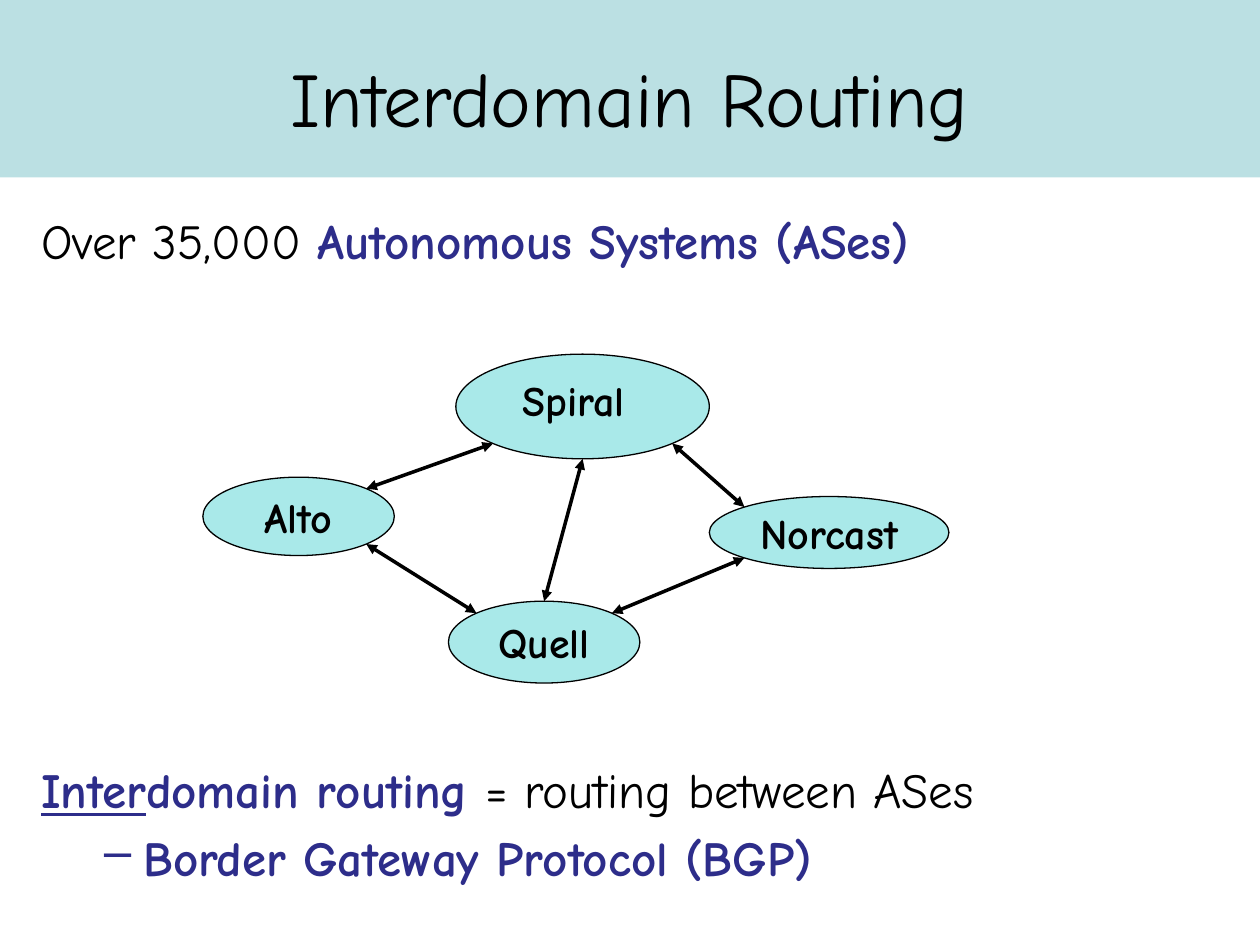
from math import sqrt

from lxml.etree import SubElement
from pptx import Presentation
from pptx.dml.color import RGBColor
from pptx.enum.shapes import MSO_CONNECTOR, MSO_SHAPE
from pptx.enum.text import MSO_ANCHOR, PP_ALIGN
from pptx.oxml.ns import qn
from pptx.util import Cm, Pt

BLACK = RGBColor(0x00, 0x00, 0x00)
NAVY = RGBColor(0x2D, 0x2D, 0x8A)
BAND = RGBColor(0xBB, 0xE0, 0xE3)
TEAL = RGBColor(0x33, 0xCC, 0xCC)
FONT = "Comic Neue"

# name: left, top, width, height within the network, in cm
NODES = {
    "Alto": (0, 2.48, 3.86, 1.58),
    "Quell": (4.95, 4.98, 3.86, 1.65),
    "Spiral": (5.1, 0, 5.11, 2.11),
    "Norcast": (10.21, 2.87, 4.83, 1.45),
}
# name and direction (x, y) of each end
LINKS = [
    ("Quell", (1, -1), "Norcast", (-1, 1)),
    ("Alto", (1, -1), "Spiral", (-1, 1)),
    ("Alto", (1, 1), "Quell", (-1, -1)),
    ("Quell", (0, -1), "Spiral", (0, 1)),
    ("Norcast", (-1, -1), "Spiral", (1, 1)),
]


def style(run, size, color=BLACK, bold=False):
    font = run.font
    font.name, font.size, font.bold = FONT, Pt(size), bold
    font.color.rgb = color


def add_text(slide, left, top, width, height):
    frame = slide.shapes.add_textbox(Cm(left), Cm(top), Cm(width), Cm(height)).text_frame
    frame.word_wrap = True
    return frame


def add_runs(para, parts):
    """Add (text, colour, bold) parts and return their runs."""
    runs = []
    for text, color, bold in parts:
        run = para.add_run()
        run.text = text
        style(run, 28, color, bold)
        runs.append(run)
    return runs


def add_head(slide, left, top, width, height):
    band = slide.shapes.add_shape(
        MSO_SHAPE.RECTANGLE, Cm(left), Cm(top), Cm(width), Cm(height))
    band.shadow.inherit = False
    band.fill.solid()
    band.fill.fore_color.rgb = BAND
    band.line.fill.background()
    frame = add_text(slide, left + 1.27, top + 0.36, width - 2.54, height - 0.4)
    frame.vertical_anchor = MSO_ANCHOR.MIDDLE
    frame.text = "Interdomain Routing"
    para = frame.paragraphs[0]
    para.alignment = PP_ALIGN.CENTER
    style(para.runs[0], 44)


def add_count(slide, left, top, width, height):
    frame = add_text(slide, left, top, width, height)
    add_runs(frame.paragraphs[0], [
        ("Over 35,000 ", BLACK, False),
        ("Autonomous Systems (ASes)", NAVY, True)])


def add_meaning(slide, left, top, width, height):
    frame = add_text(slide, left, top, width, height)
    runs = add_runs(frame.paragraphs[0], [
        ("Inter", NAVY, True),
        ("domain routing ", NAVY, True),
        ("= routing between ASes", BLACK, False)])
    runs[0].font.underline = True
    para = frame.add_paragraph()
    para.space_before = Pt(5.6)
    add_runs(para, [("Border Gateway Protocol (BGP)", NAVY, True)])
    props = para._p.get_or_add_pPr()
    props.set("marL", str(Cm(2.06)))
    props.set("indent", str(-Cm(0.79)))
    SubElement(props, qn("a:buChar"), char="–")


def add_node(slide, name, left, top, width, height):
    node = slide.shapes.add_shape(
        MSO_SHAPE.OVAL, Cm(left), Cm(top), Cm(width), Cm(height))
    node.shadow.inherit = False
    node.fill.solid()
    node.fill.fore_color.rgb = TEAL
    tint = node._element.spPr.find(qn("a:solidFill")).find(qn("a:srgbClr"))
    SubElement(tint, qn("a:alpha"), val="42000")
    node.line.color.rgb = BLACK
    node.line.width = Pt(0.75)
    if name == "Spiral":  # its label sits a little up and left of the middle
        frame = add_text(slide, left + 1.1, top + 0.28, 3.07, 1.3)
        frame.text = name
    else:
        frame = node.text_frame
        frame.text = name
        frame.word_wrap = False
        frame.vertical_anchor = MSO_ANCHOR.MIDDLE
        frame.paragraphs[0].alignment = PP_ALIGN.CENTER
    style(frame.paragraphs[0].runs[0], 24, bold=True)


def rim(box, way):
    """Point on the ellipse in a box, in one of eight directions."""
    left, top, width, height = box
    x, y = way
    size = sqrt(x * x + y * y)
    return (Cm(left + width / 2 * (1 + x / size)),
            Cm(top + height / 2 * (1 + y / size)))


def add_link(slide, start, end):
    link = slide.shapes.add_connector(MSO_CONNECTOR.STRAIGHT, *start, *end)
    link.line.color.rgb = BLACK
    link.line.width = Pt(2)
    props = link._element.spPr
    line = props.find(qn("a:ln"))
    for tag in ("a:headEnd", "a:tailEnd"):
        SubElement(line, qn(tag), type="triangle")
    SubElement(props, qn("a:effectLst"))


def add_network(slide, left, top):
    boxes = {name: (left + x, top + y, w, h)
             for name, (x, y, w, h) in NODES.items()}
    for name, box in boxes.items():
        add_node(slide, name, *box)
    for first, out, last, back in LINKS:
        add_link(slide, rim(boxes[first], out), rim(boxes[last], back))


def main():
    deck = Presentation()
    deck.slide_width, deck.slide_height = Cm(25.4), Cm(19.05)
    slide = deck.slides.add_slide(deck.slide_layouts[6])
    add_head(slide, 0, 0, 25.4, 3.58)
    add_count(slide, 0.58, 4.11, 24.13, 1.5)
    add_network(slide, 4.09, 7.14)
    add_meaning(slide, 0.58, 15.18, 24.13, 2.9)
    deck.save("out.pptx")


if __name__ == "__main__":
    main()
